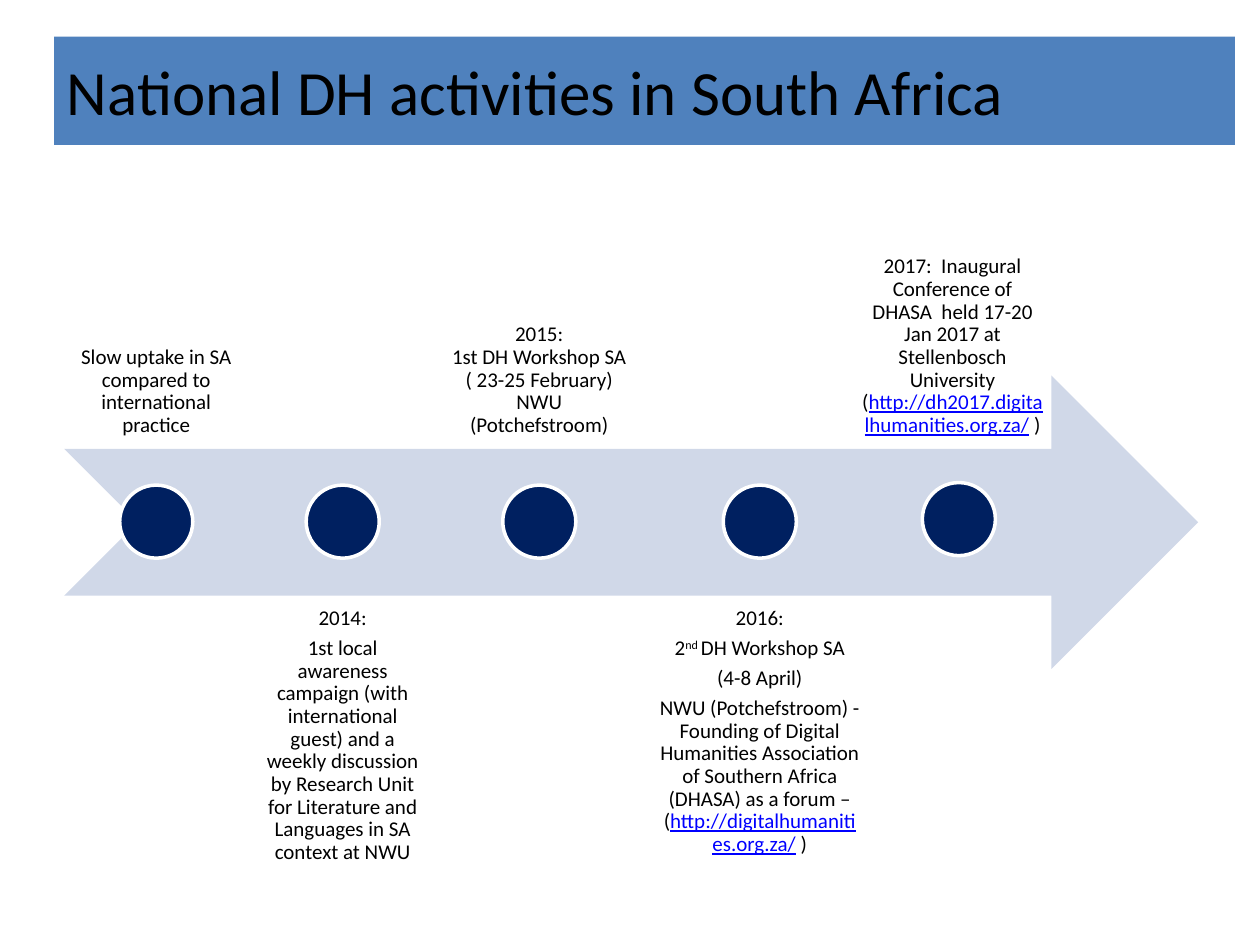
from typing import NamedTuple

from pptx import Presentation
from pptx.dml.color import RGBColor
from pptx.enum import shapes as sh, text as tx
from pptx.util import Inches, Pt

FONT = "Calibri"
BLACK, WHITE, NAVY, LINK = "000000", "FFFFFF", "002060", "0000FF"
BAR, ARROW = "4F81BD", "D0D8E8"
DOT, BOX_H, INSET = 0.58, 2.33, 0.09
MID_Y = 4.14  # centre line of the dots
TOP_Y, LOW_Y = 1.23, 4.73  # text boxes above and below the arrow


class Run(NamedTuple):
    text: str
    link: bool = False
    sup: bool = False


class Event(NamedTuple):
    mid: float  # centre of the text
    width: float
    above: bool
    paras: list[list[Run]]
    gap: float = 0  # points after each paragraph
    shift: tuple[float, float] = (0, 0)  # offset of the dot


EVENTS = [
    Event(1.24, 1.45, True, [
        [Run("Slow uptake in SA compared to international practice")]]),
    Event(2.72, 1.4, False, [
        [Run("2014:")],
        [Run("1st local awareness campaign (with international guest) and a "
             "weekly discussion by Research Unit for Literature and "
             "Languages in SA context at NWU")]], gap=4.2),
    Event(4.28, 1.6, True, [
        [Run("2015:")],
        [Run("1st DH Workshop SA")],
        [Run("( 23-25 February)")],
        [Run("NWU (Potchefstroom)")]]),
    Event(6.03, 1.78, False, [
        [Run("2016:")],
        [Run("2"), Run("nd ", sup=True), Run("DH Workshop SA")],
        [Run("(4-8 April)")],
        [Run("NWU (Potchefstroom) - Founding of Digital Humanities "
             "Association of Southern Africa (DHASA) as a forum – ("),
         Run("http://digitalhumanities.org.za/", link=True), Run(" )")]],
        gap=4.2),
    Event(7.56, 1.64, True, [
        [Run("2017:  Inaugural Conference of DHASA  held 17-20 Jan 2017 at "
             "Stellenbosch University ("),
         Run("http://dh2017.digitalhumanities.org.za/", link=True),
         Run(" )")]], shift=(0.05, -0.02)),
]


def rgb(code: str) -> RGBColor:
    return RGBColor.from_string(code)


def style(obj, **vals) -> None:
    for name, val in vals.items():
        setattr(obj, name, val)


def place(x: float, y: float, w: float, h: float) -> dict:
    names = ("left", "top", "width", "height")
    return dict(zip(names, map(Inches, (x, y, w, h))))


def add_form(slide, kind, spot: dict, fill: str, line: str | None = None):
    form = slide.shapes.add_shape(kind, *spot.values())
    form.shadow.inherit = False
    form.fill.solid()
    form.fill.fore_color.rgb = rgb(fill)
    if line:
        form.line.color.rgb = rgb(line)
        form.line.width = Pt(2)
    else:
        form.line.fill.background()


def add_run(para, item: Run) -> None:
    run = para.add_run()
    run.text = item.text
    style(run.font, name=FONT, size=Pt(12))
    run.font.color.rgb = rgb(LINK if item.link else BLACK)
    if item.link:
        run.font.underline = True
    if item.sup:
        run.font._element.set("baseline", "30000")


def add_event(slide, event: Event) -> None:
    # Text
    spot = place(event.mid - event.width / 2,
                 TOP_Y if event.above else LOW_Y, event.width, BOX_H)
    frame = slide.shapes.add_textbox(*spot.values()).text_frame
    anchor = tx.MSO_ANCHOR.BOTTOM if event.above else tx.MSO_ANCHOR.TOP
    style(frame, word_wrap=True, vertical_anchor=anchor)
    for side in ("left", "top", "right", "bottom"):
        setattr(frame, f"margin_{side}", Inches(INSET))
    for i, runs in enumerate(event.paras):
        para = frame.add_paragraph() if i else frame.paragraphs[0]
        style(para, alignment=tx.PP_ALIGN.CENTER, line_spacing=0.9,
              space_after=Pt(event.gap))
        for item in runs:
            add_run(para, item)
    # Dot
    dx, dy = event.shift
    add_form(slide, sh.MSO_SHAPE.OVAL,
             place(event.mid + dx - DOT / 2, MID_Y + dy - DOT / 2, DOT, DOT),
             NAVY, WHITE)


def add_title(slide, words: str) -> None:
    title = slide.shapes.title
    style(title, **place(0.43, 0.29, 9.37, 0.86))
    title.fill.solid()
    title.fill.fore_color.rgb = rgb(BAR)
    title.text_frame.text = words
    title.text_frame.vertical_anchor = tx.MSO_ANCHOR.MIDDLE
    para = title.text_frame.paragraphs[0]
    para.alignment = tx.PP_ALIGN.LEFT
    font = para.runs[0].font
    style(font, name=FONT, size=Pt(36))
    font.color.rgb = rgb(BLACK)


def main() -> None:
    deck = Presentation()
    style(deck, slide_width=Inches(10), slide_height=Inches(7.5))
    slide = deck.slides.add_slide(deck.slide_layouts[5])
    add_title(slide, "National DH activities in South Africa")
    # Timeline
    add_form(slide, sh.MSO_SHAPE.NOTCHED_RIGHT_ARROW,
             place(0.51, 2.98, 9, BOX_H), ARROW)
    for event in EVENTS:
        add_event(slide, event)
    deck.save("out.pptx")


if __name__ == "__main__":
    main()
